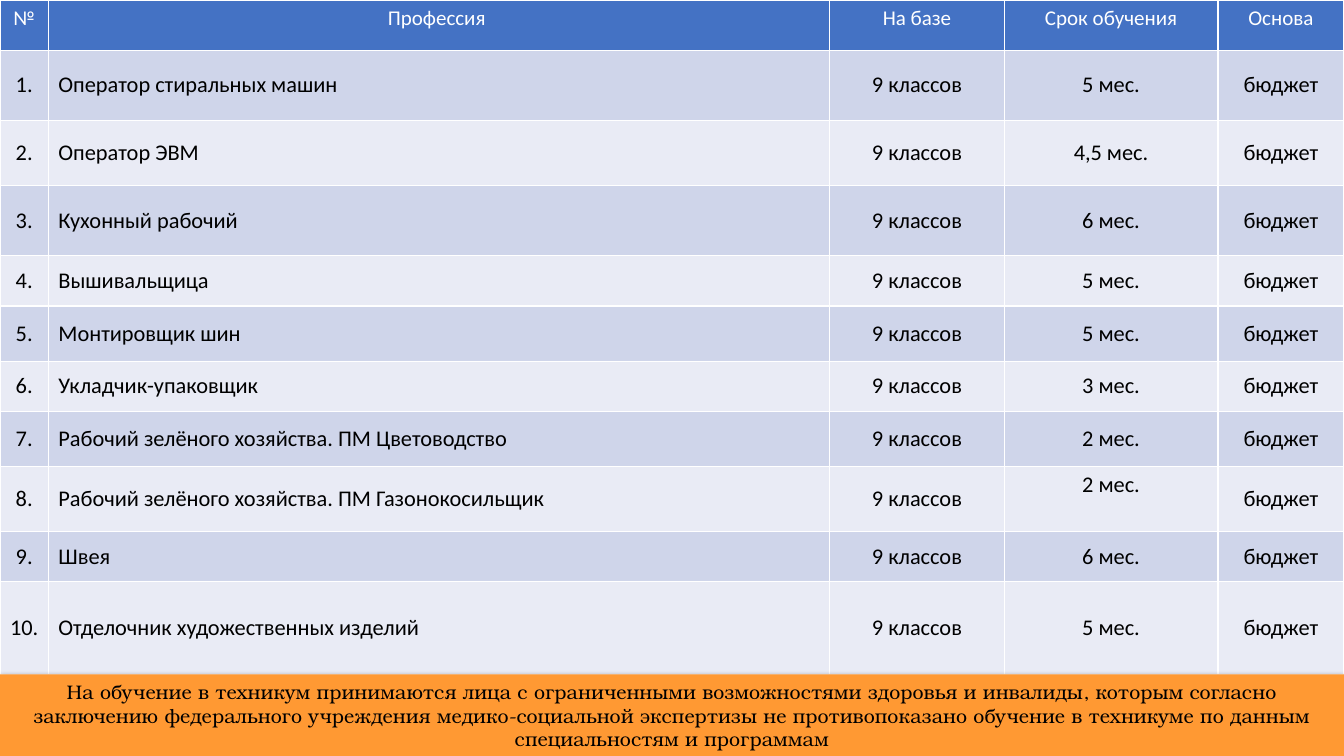
from dataclasses import dataclass

from lxml.etree import SubElement
from pptx import Presentation
from pptx.dml.color import RGBColor
from pptx.enum.shapes import MSO_SHAPE
from pptx.enum.text import MSO_ANCHOR, MSO_AUTO_SIZE, PP_ALIGN
from pptx.oxml.ns import qn
from pptx.util import Inches, Pt


@dataclass(frozen=True)
class Theme:
    header: str = "4472C4"
    bands: tuple = ("CFD5EA", "E9EBF5")
    notice: str = "FF9933"
    light: str = "FFFFFF"
    dark: str = "000000"
    font: str = "Calibri"
    notice_font: str = "TeX Gyre Bonum"
    header_size: int = 15
    cell_size: int = 16
    notice_size: int = 14


HEADERS = ["№", "Профессия ", "На базе", "Срок обучения", "Основа"]
COL_WIDTHS = [0.48, 7.75, 1.73, 2.12, 1.25]
NUMBER_MARGIN = 0.04
TABLE_HEIGHT = 6.69
HEADER_HEIGHT = 0.5
BASE, FUNDING = "9 классов", "бюджет"
# profession, training time, row height before fitting to TABLE_HEIGHT
COURSES = [
    ("Оператор стиральных машин", "5 мес.", 0.7),
    ("Оператор ЭВМ", "4,5 мес.", 0.65),
    ("Кухонный рабочий", "6 мес.", 0.7),
    ("Вышивальщица", "5 мес.", 0.5),
    ("Монтировщик шин", "5 мес.", 0.55),
    ("Укладчик-упаковщик", "3 мес.", 0.5),
    ("Рабочий зелёного хозяйства. ПМ Цветоводство", "2 мес.", 0.55),
    ("Рабочий зелёного хозяйства. ПМ Газонокосильщик", "2 мес.", 0.65),
    ("Швея", "6 мес.", 0.5),
    ("Отделочник художественных изделий", "5 мес.", 0.92),
]
NOTICE = (
    "На обучение в техникум принимаются лица с ограниченными возможностями "
    "здоровья и инвалиды, которым согласно заключению федерального учреждения "
    "медико-социальной экспертизы не противопоказано обучение в техникуме "
    "по данным специальностям и программам"
)


def write(tf, text, *, size, color, font, align=PP_ALIGN.CENTER):
    p = tf.paragraphs[0]
    p.alignment = align
    r = p.add_run()
    r.text = text
    r.font.name = font
    r.font.size = Pt(size)
    r.font.bold = False
    r.font.color.rgb = RGBColor.from_string(color)


def paint(target, color):
    target.fill.solid()
    target.fill.fore_color.rgb = RGBColor.from_string(color)


def add_shadow(sp, color):
    """Cast a soft shadow straight down."""
    sp.shadow.inherit = False
    effects = sp._element.spPr.find(qn("a:effectLst"))
    shadow = SubElement(effects, qn("a:outerShdw"), blurRad=str(Pt(4.5)),
                        dist=str(Pt(1.5)), dir="5400000", rotWithShape="0")
    clr = SubElement(shadow, qn("a:srgbClr"), val=color)
    SubElement(clr, qn("a:alpha"), val="63000")


class SlideBuilder:
    def __init__(self, s, theme):
        self.s = s
        self.theme = theme

    def table(self, rows, col_widths, row_heights, total_height):
        """Fill a table whose rows share total_height in proportion."""
        t = self.theme
        scale = total_height / sum(row_heights)
        table = self.s.shapes.add_table(
            len(rows), len(col_widths), 0, 0,
            Inches(sum(col_widths)), Inches(total_height)).table
        for column, width in zip(table.columns, col_widths):
            column.width = Inches(width)
        for i, (values, height) in enumerate(zip(rows, row_heights)):
            table.rows[i].height = Inches(height * scale)
            for j, value in enumerate(values):
                cell = table.cell(i, j)
                if j == 0:
                    cell.margin_left = cell.margin_right = Inches(NUMBER_MARGIN)
                if i == 0:
                    paint(cell, t.header)
                    write(cell.text_frame, value, size=t.header_size,
                          color=t.light, font=t.font)
                    continue
                paint(cell, t.bands[(i - 1) % 2])
                cell.vertical_anchor = MSO_ANCHOR.MIDDLE
                write(cell.text_frame, value, size=t.cell_size,
                      color=t.dark, font=t.font,
                      align=PP_ALIGN.LEFT if j == 1 else PP_ALIGN.CENTER)
        return table

    def notice(self, text, left, top, width, height):
        t = self.theme
        sp = self.s.shapes.add_shape(
            MSO_SHAPE.RECTANGLE, Inches(left), Inches(top),
            Inches(width), Inches(height))
        paint(sp, t.notice)
        sp.line.fill.background()
        add_shadow(sp, t.dark)
        tf = sp.text_frame
        tf.word_wrap = True
        tf.auto_size = MSO_AUTO_SIZE.SHAPE_TO_FIT_TEXT
        tf.vertical_anchor = MSO_ANCHOR.MIDDLE
        write(tf, text, size=t.notice_size, color=t.dark, font=t.notice_font)


def main():
    prs = Presentation()
    prs.slide_width, prs.slide_height = Inches(13.33), Inches(7.5)
    slide = SlideBuilder(prs.slides.add_slide(prs.slide_layouts[6]), Theme())

    rows = [HEADERS] + [
        [f"{n}.", profession, BASE, term, FUNDING]
        for n, (profession, term, _) in enumerate(COURSES, 1)]
    heights = [HEADER_HEIGHT] + [height for _, _, height in COURSES]
    table = slide.table(rows, COL_WIDTHS, heights, TABLE_HEIGHT)
    table.cell(8, 3).vertical_anchor = MSO_ANCHOR.TOP

    slide.notice(NOTICE, 0, TABLE_HEIGHT, 13.33, 0.81)
    prs.save("out.pptx")


if __name__ == "__main__":
    main()
